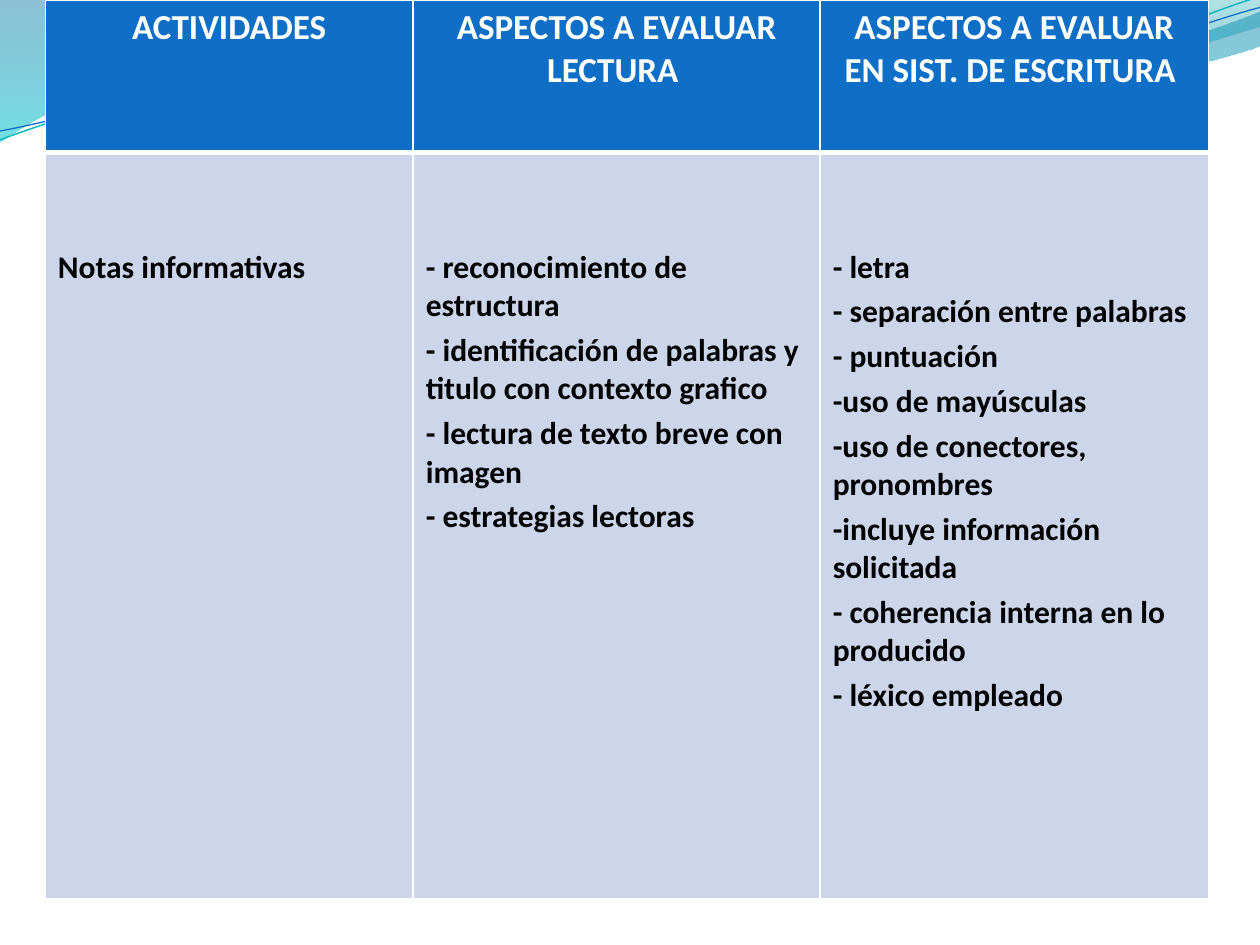
import math

from lxml import etree
from pptx import Presentation
from pptx.dml.color import RGBColor
from pptx.enum import text as t
from pptx.oxml import ns
from pptx.util import Inches, Pt

# Content
HEADS = ["ACTIVIDADES", "ASPECTOS A EVALUAR LECTURA ",
         "ASPECTOS A EVALUAR EN SIST. DE ESCRITURA "]
BODY = [
    ["Notas informativas"],
    ["- reconocimiento de estructura",
     "- identificación de palabras y titulo con contexto grafico",
     "- lectura de texto breve con imagen",
     "- estrategias lectoras"],
    ["- letra", "- separación entre palabras", "- puntuación",
     "-uso de mayúsculas", "-uso de conectores, pronombres",
     "-incluye información solicitada",
     "- coherencia interna en lo producido", "- léxico empleado"],
]
COLS = [2.92, 3.23, 3.08]
ROWS = [1.21, 5.92]

BLUE = RGBColor(0x0F, 0x6F, 0xC6)
TEAL = RGBColor(0x0A, 0xB8, 0xBF)
PALE = RGBColor(0xCC, 0xD5, 0xEA)
WHITE = RGBColor(0xFF, 0xFF, 0xFF)
BLACK = RGBColor(0, 0, 0)

# Waves: a start, then segments of one point (line) or three (curve)
BANDS = [
    ([[(0, -0.01)], [(4.4, -0.01)],
      [(4.76, 0.17), (6.64, 0.63), (7.58, 0.63)],
      [(8.53, 0.63), (9.58, 0.26), (10, 0.09)], [(10.01, 0.36)],
      [(9.83, 0.44), (8.7, 0.76), (7.46, 0.75)],
      [(6.22, 0.75), (3.82, 0.28), (2.57, 0.34)],
      [(1.29, 0.35), (0.46, 0.83), (-0.01, 1.13)], [(0, -0.01)]],
     [(0, "0074A1", 45), (100, "00C6CF", 55)]),
    ([[(4.79, -0.01)], [(5.09, 0.11), (6.82, 0.62), (7.69, 0.65)],
      [(8.56, 0.69), (9.61, 0.32), (10, 0.21)], [(10, 0)], [(4.79, -0.01)]],
     [(0, "00A1A9", 30), (80, "008BBF", 45)]),
]
LINES = [
    ([[(0, 1.11)], [(0.48, 0.93), (1.58, 0.57), (2.77, 0.52)],
      [(3.95, 0.47), (5.93, 0.89), (7.13, 0.8)],
      [(8.33, 0.71), (9.38, 0.15), (9.98, -0.02)]], TEAL, 0.85, (4.99, 0.58)),
    ([[(0, 1.04)], [(0.47, 0.96), (1.64, 0.61), (2.83, 0.56)],
      [(4.03, 0.51), (5.97, 0.83), (7.17, 0.75)],
      [(8.36, 0.67), (9.41, 0.21), (10, 0.06)]], BLUE, 0.75, (5, 0.59)),
]
TILT = 2.7


def add(root, tag, **attrs):
    return etree.SubElement(root, ns.qn(tag), attrs)


def turn(point, mid):
    """Level a point of a tilted wave about the middle of its box."""
    a = math.radians(TILT)
    x, y = point[0] - mid[0], point[1] - mid[1]
    return (mid[0] + x * math.cos(a) - y * math.sin(a),
            mid[1] + x * math.sin(a) + y * math.cos(a))


def draw(slide, wave, close):
    """Lay out every point, then join each group of three into a curve."""
    pts = [(Inches(x), Inches(y)) for seg in wave for x, y in seg]
    pen = slide.shapes.build_freeform(*pts[0])
    pen.add_line_segments(pts[1:], close=close)
    shape = pen.convert_to_shape()
    shape.shadow.inherit = False
    steps = list(shape._element.iter(ns.qn("a:lnTo")))
    for seg in wave[1:]:
        group, steps = steps[:len(seg)], steps[len(seg):]
        if len(seg) == 3:
            curve = etree.Element(ns.qn("a:cubicBezTo"))
            group[0].addprevious(curve)
            for step in group:
                curve.append(step[0])
                step.getparent().remove(step)
    return shape


def shade(shape, stops):
    """Fill from top to bottom with see-through colours."""
    shape.line.fill.background()
    shape.fill.background()
    old = shape._element.spPr.find(ns.qn("a:noFill"))
    grad = etree.Element(ns.qn("a:gradFill"), rotWithShape="1")
    row = add(grad, "a:gsLst")
    for pos, tint, alpha in stops:
        stop = add(row, "a:gs", pos=str(pos * 1000))
        add(add(stop, "a:srgbClr", val=tint), "a:alpha", val=str(alpha * 1000))
    add(grad, "a:lin", ang="5400000", scaled="0")
    old.getparent().replace(old, grad)


def edge(cell, widths):
    """Give the cell white borders: left, right, top, bottom."""
    props = cell._tc.get_or_add_tcPr()
    for i, (side, wide) in enumerate(zip("LRTB", widths)):
        line = etree.Element(ns.qn("a:ln" + side), w=str(Pt(wide)))
        add(add(line, "a:solidFill"), "a:srgbClr", val=str(WHITE))
        props.insert(i, line)


def write(cell, lines, look):
    frame = cell.text_frame
    for i, line in enumerate(lines):
        para = frame.add_paragraph() if i else frame.paragraphs[0]
        para.alignment = look["align"]
        if i:
            para.space_before = Pt(3.6)
        run = para.add_run()
        run.text = line
        run.font.color.rgb = look["color"]
        for key, val in look["font"].items():
            setattr(run.font, key, val)


def main():
    deck = Presentation()
    deck.slide_width, deck.slide_height = Inches(10), Inches(7.5)
    slide = deck.slides.add_slide(deck.slide_layouts[6])

    # Waves behind the table
    for wave, stops in BANDS:
        shade(draw(slide, wave, True), stops)
    for wave, color, wide, mid in LINES:
        level = [[turn(p, mid) for p in seg] for seg in wave]
        shape = draw(slide, level, False)
        shape.rotation = 360 - TILT
        shape.fill.background()
        shape.line.color.rgb = color
        shape.line.width = Pt(wide)

    # Table
    grid = slide.shapes.add_table(
        2, 3, Inches(0.36), 0, Inches(sum(COLS)), Inches(sum(ROWS))).table
    grid.horz_banding = False
    for col, wide in zip(grid.columns, COLS):
        col.width = Inches(wide)
    for row, high in zip(grid.rows, ROWS):
        row.height = Inches(high)

    base = {"name": "Calibri", "bold": True}
    looks = [
        {"fill": BLUE, "color": WHITE, "font": {**base, "size": Pt(20)},
         "align": t.PP_ALIGN.CENTER, "top": 0.05, "edges": (1, 1, 1, 3)},
        {"fill": PALE, "color": BLACK, "font": {**base, "size": Pt(18)},
         "align": t.PP_ALIGN.LEFT, "top": 0.76, "edges": (1, 1, 3, 1)},
    ]
    for r, (texts, look) in enumerate(zip([[[h] for h in HEADS], BODY], looks)):
        for c, lines in enumerate(texts):
            cell = grid.cell(r, c)
            cell.fill.solid()
            cell.fill.fore_color.rgb = look["fill"]
            cell.margin_top = Inches(look["top"])
            edge(cell, look["edges"])
            write(cell, lines, look)

    deck.save("out.pptx")


if __name__ == "__main__":
    main()
